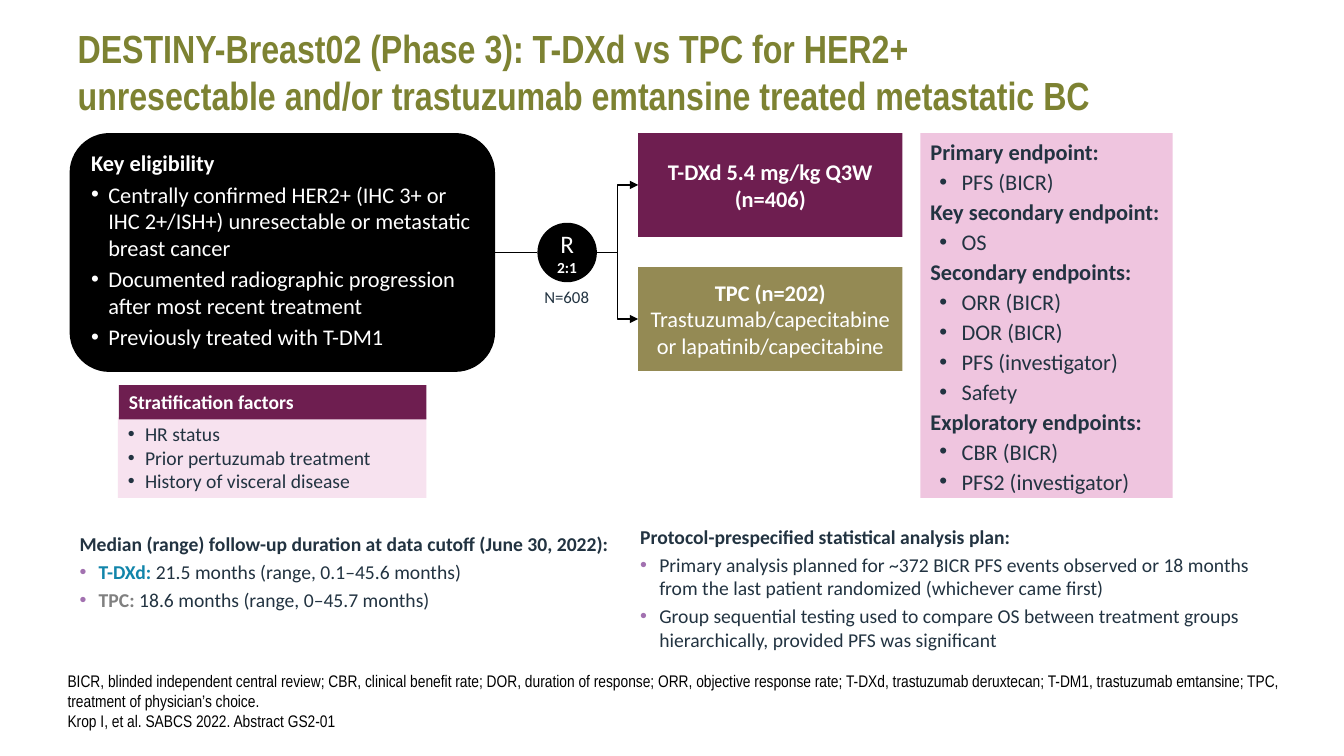
"""Build the DESTINY-Breast02 trial design slide."""
from lxml import etree
from pptx import Presentation
from pptx.dml.color import RGBColor
from pptx.enum.shapes import MSO_CONNECTOR as Connector, MSO_SHAPE as Shape
from pptx.enum.text import MSO_ANCHOR as Anchor, PP_ALIGN as Align
from pptx.oxml.ns import qn
from pptx.util import Inches, Pt

BLACK = RGBColor(0x00, 0x00, 0x00)
WHITE = RGBColor(0xFF, 0xFF, 0xFF)
INK = RGBColor(0x22, 0x33, 0x41)
PLUM = RGBColor(0x6E, 0x1E, 0x50)
OLIVE = RGBColor(0x94, 0x8A, 0x54)
TITLE_GREEN = RGBColor(0x7D, 0x82, 0x32)
PINK = RGBColor(0xEF, 0xC5, 0xDF)
PALE_PINK = RGBColor(0xF7, 0xE2, 0xEF)
LILAC = RGBColor(0xA2, 0x71, 0xB0)
TEAL = RGBColor(0x11, 0x85, 0xAA)
GREY = RGBColor(0x80, 0x80, 0x80)

HEAD, BULLET, PLAIN = "head", "bullet", "plain"

TITLE = [(HEAD, "DESTINY-Breast02 (Phase 3): T-DXd vs TPC for HER2+ \n"
                "unresectable and/or trastuzumab emtansine treated metastatic BC")]
FOOTNOTE = [(PLAIN, "BICR, blinded independent central review; CBR, clinical benefit rate; "
                    "DOR, duration of response; ORR, objective response rate; "
                    "T-DXd, trastuzumab deruxtecan; T-DM1, trastuzumab emtansine; "
                    "TPC, treatment of physician’s choice.\n"
                    "Krop I, et al. SABCS 2022. Abstract GS2-01")]
ELIGIBILITY = [
    (HEAD, "Key eligibility"),
    (BULLET, "Centrally confirmed HER2+ (IHC 3+ or IHC 2+/ISH+) unresectable "
             "or metastatic breast cancer"),
    (BULLET, "Documented radiographic progression after most recent treatment"),
    (BULLET, "Previously treated with T-DM1"),
]
ARMS = [
    (PLUM, [(HEAD, "T-DXd 5.4 mg/kg Q3W (n=406)")]),
    (OLIVE, [(HEAD, "TPC (n=202)"),
             (PLAIN, "Trastuzumab/capecitabine or lapatinib/capecitabine")]),
]
ENDPOINTS = [
    (HEAD, "Primary endpoint:"),
    (BULLET, "PFS (BICR)"),
    (HEAD, "Key secondary endpoint:"),
    (BULLET, "OS"),
    (HEAD, "Secondary endpoints:"),
    (BULLET, "ORR (BICR)"),
    (BULLET, "DOR (BICR)"),
    (BULLET, "PFS (investigator)"),
    (BULLET, "Safety"),
    (HEAD, "Exploratory endpoints:"),
    (BULLET, "CBR (BICR)"),
    (BULLET, "PFS2 (investigator)"),
]
FACTORS = [
    (BULLET, "HR status"),
    (BULLET, "Prior pertuzumab treatment"),
    (BULLET, "History of visceral disease"),
]
FOLLOW_UP = [
    (HEAD, "Median (range) follow-up duration at data cutoff (June 30, 2022):"),
    (BULLET, "21.5 months (range, 0.1–45.6 months)", "T-DXd: ", TEAL),
    (BULLET, "18.6 months (range, 0–45.7 months)", "TPC: ", GREY),
]
ANALYSIS = [
    (HEAD, "Protocol-prespecified statistical analysis plan:"),
    (BULLET, "Primary analysis planned for ~372 BICR PFS events observed or 18 months "
             "from the last patient randomized (whichever came first)"),
    (BULLET, "Group sequential testing used to compare OS between treatment groups "
             "hierarchically, provided PFS was significant"),
]


def add_run(paragraph, text, size, color, bold=False, name="Calibri"):
    """Add formatted text, turning newlines into line breaks."""
    for index, line in enumerate(text.split("\n")):
        if index:
            paragraph.add_line_break()
        run = paragraph.add_run()
        run.text = line
        run.font.name, run.font.size, run.font.bold = name, Pt(size), bold
        run.font.color.rgb = color


def set_bullet(paragraph, left=0, hanging=0, color=None, shown=True):
    """Set the indents and the bullet of a paragraph."""
    properties = paragraph._p.get_or_add_pPr()
    properties.set("marL", str(Inches(left)))
    properties.set("indent", str(Inches(-hanging)))
    if not shown:
        etree.SubElement(properties, qn("a:buNone"))
        return
    if color is not None:
        bullet_color = etree.SubElement(properties, qn("a:buClr"))
        etree.SubElement(bullet_color, qn("a:srgbClr"), val=str(color))
    etree.SubElement(properties, qn("a:buFont"), typeface="Arial")
    etree.SubElement(properties, qn("a:buChar"), char="•")


def write(shape, rows, size, color, name="Calibri", align=Align.LEFT, anchor=Anchor.TOP,
          after=0, spacing=None, indent=(0.17, 0.17), bullet_color=None):
    """Fill a shape with headings, bullets and plain paragraphs."""
    frame = shape.text_frame
    frame.word_wrap, frame.vertical_anchor = True, anchor
    for index, (kind, text, *label) in enumerate(rows):
        paragraph = frame.add_paragraph() if index else frame.paragraphs[0]
        if kind == BULLET:
            set_bullet(paragraph, *indent, bullet_color)
        else:
            set_bullet(paragraph, shown=False)
        paragraph.alignment = align
        paragraph.space_before, paragraph.space_after = Pt(0), Pt(after)
        if spacing:
            paragraph.line_spacing = Pt(spacing)
        if label:
            add_run(paragraph, label[0], size, label[1], True, name)
        add_run(paragraph, text, size, color, kind == HEAD, name)


def add_box(slide, preset, place, fill):
    """Add a filled shape without outline or shadow."""
    shape = slide.shapes.add_shape(preset, *map(Inches, place))
    shape.shadow.inherit = False
    shape.fill.solid()
    shape.fill.fore_color.rgb = fill
    shape.line.fill.background()
    return shape


def add_text_box(slide, place):
    """Add an empty text box."""
    return slide.shapes.add_textbox(*map(Inches, place))


def link(slide, kind, start, end, arrow=False):
    """Draw a thin line from the right of one shape to the left of another."""
    connector = slide.shapes.add_connector(
        kind, start.left + start.width, start.top + start.height // 2,
        end.left, end.top + end.height // 2)
    connector.line.color.rgb = BLACK
    connector.line.width = Pt(1)
    properties = connector._element.spPr
    if arrow:
        etree.SubElement(properties.find(qn("a:ln")), qn("a:tailEnd"), type="triangle")
    etree.SubElement(properties, qn("a:effectLst"))


def fill_placeholder(placeholder, place, rows, size, color, anchor):
    """Move a placeholder and write its text."""
    placeholder.left, placeholder.top, placeholder.width, placeholder.height = map(Inches, place)
    write(placeholder, rows, size, color, "Arial Narrow", anchor=anchor)


def main():
    """Assemble and save the slide."""
    presentation = Presentation()
    presentation.slide_width, presentation.slide_height = Inches(13.33), Inches(7.5)
    slide = presentation.slides.add_slide(presentation.slide_layouts[1])
    title, footnote = slide.placeholders
    fill_placeholder(title, (0.67, 0.19, 11.9, 0.91), TITLE, 28, TITLE_GREEN, Anchor.TOP)
    fill_placeholder(footnote, (0.67, 6.59, 12.22, 0.66), FOOTNOTE, 12, BLACK, Anchor.BOTTOM)
    footnote.text_frame.margin_left = footnote.text_frame.margin_bottom = 0

    eligibility = add_box(slide, Shape.ROUNDED_RECTANGLE, (0.69, 1.32, 4.22, 2.37), BLACK)
    write(eligibility, ELIGIBILITY, 16, WHITE, after=3)

    randomization = add_box(slide, Shape.OVAL, (5.33, 2.21, 0.59, 0.59), BLACK)
    frame = randomization.text_frame
    frame.margin_left = frame.margin_right = frame.margin_top = frame.margin_bottom = 0
    write(randomization, [(PLAIN, "R")], 18, WHITE, align=Align.CENTER, anchor=Anchor.MIDDLE)
    frame.paragraphs[0].add_line_break()
    add_run(frame.paragraphs[0], "2:1", 11, WHITE, True)
    link(slide, Connector.STRAIGHT, eligibility, randomization)

    for index, (fill, rows) in enumerate(ARMS):
        arm = add_box(slide, Shape.RECTANGLE, (6.33, 1.32 + 1.33 * index, 2.62, 1.03), fill)
        write(arm, rows, 16, WHITE, align=Align.CENTER, anchor=Anchor.MIDDLE)
        link(slide, Connector.ELBOW, randomization, arm, arrow=True)

    sample_size = add_text_box(slide, (5.3, 2.8, 0.65, 0.3))
    write(sample_size, [(PLAIN, "N=608")], 12, INK)
    sample_size.text_frame.word_wrap = False

    endpoints = add_box(slide, Shape.RECTANGLE, (9.13, 1.32, 2.5, 3.62), PINK)
    write(endpoints, ENDPOINTS, 16, INK, after=2, spacing=19.4, indent=(0.31, 0.22))

    factors = add_box(slide, Shape.RECTANGLE, (1.17, 4.14, 3.06, 0.8), PALE_PINK)
    write(factors, FACTORS, 14, INK, anchor=Anchor.MIDDLE)
    factors_header = add_box(slide, Shape.RECTANGLE, (1.18, 3.82, 3.05, 0.34), PLUM)
    write(factors_header, [(HEAD, "Stratification factors")], 14, WHITE)

    for place, rows in (((0.69, 5.23, 5.58, 0.89), FOLLOW_UP),
                        ((6.25, 5.16, 6.31, 1.36), ANALYSIS)):
        write(add_text_box(slide, place), rows, 14, INK, after=3,
              indent=(0.19, 0.19), bullet_color=LILAC)
    presentation.save("out.pptx")


if __name__ == "__main__":
    main()
